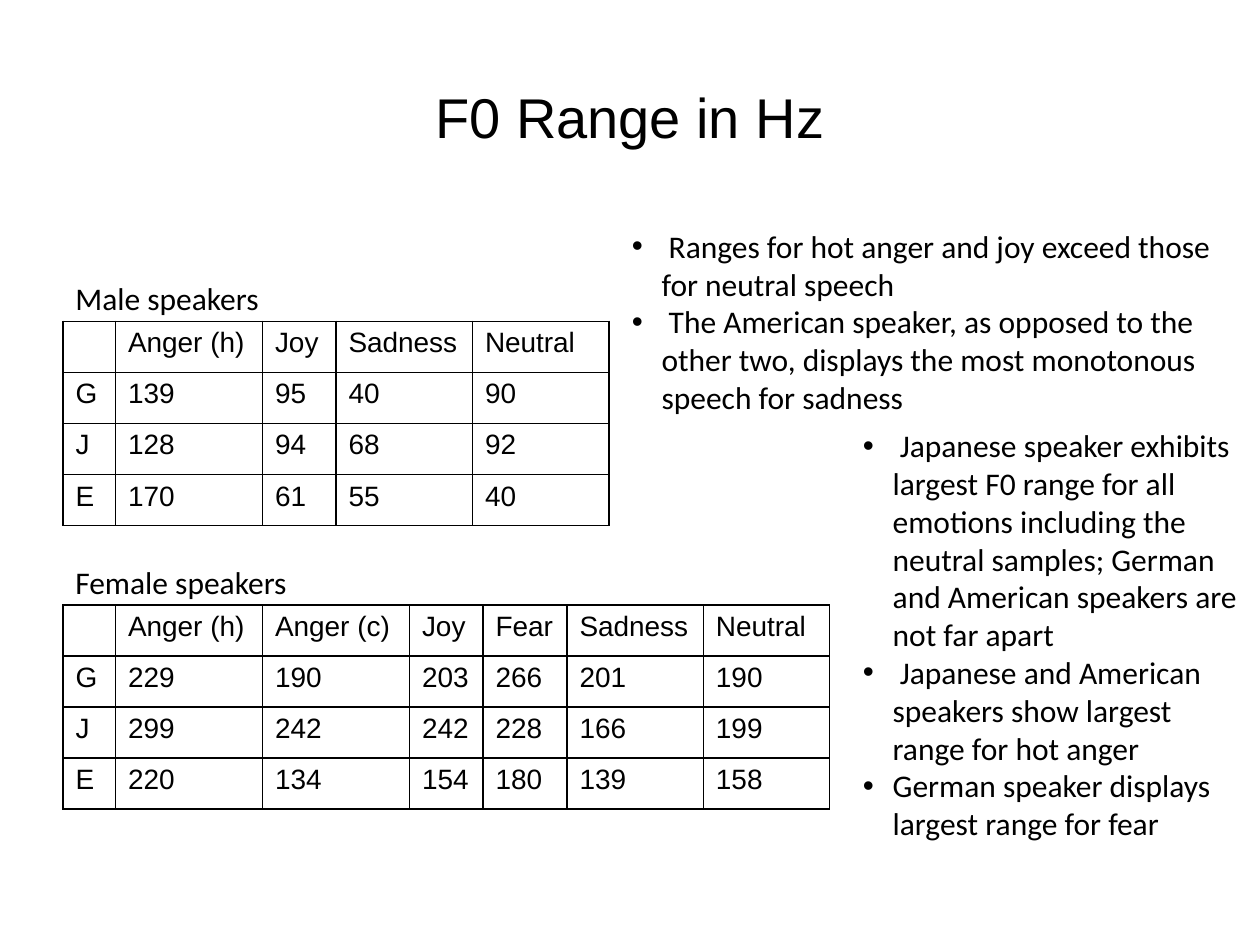
"""Build a slide comparing F0 ranges of male and female speakers."""
import lxml.etree
import pptx
import pptx.dml.color
import pptx.enum.text
import pptx.oxml.ns
import pptx.util

Pt = pptx.util.Pt
qn = pptx.oxml.ns.qn
BLACK = pptx.dml.color.RGBColor(0, 0, 0)
WHITE = pptx.dml.color.RGBColor(255, 255, 255)
LEFT = 36
ROW_HEIGHT = 29.2
BULLET_INDENT = 17

MALE_WIDTHS = [30, 84, 42, 78, 78]
MALE_RANGES = [
    ["", "Anger (h)", "Joy", "Sadness", "Neutral"],
    ["G", "139", "95", "40", "90"],
    ["J", "128", "94", "68", "92"],
    ["E", "170", "61", "55", "40"],
]
FEMALE_WIDTHS = [30, 84, 84, 42, 48, 78, 72]
FEMALE_RANGES = [
    ["", "Anger (h)", "Anger (c)", "Joy", "Fear", "Sadness", "Neutral"],
    ["G", "229", "190", "203", "266", "201", "190"],
    ["J", "299", "242", "242", "228", "166", "199"],
    ["E", "220", "134", "154", "180", "139", "158"],
]
MALE_FINDINGS = [
    " Ranges for hot anger and joy exceed those for neutral speech",
    " The American speaker, as opposed to the other two, displays the most "
    "monotonous speech for sadness",
]
FEMALE_FINDINGS = [
    " Japanese speaker exhibits largest F0 range for all emotions including "
    "the neutral samples; German and American speakers are not far apart",
    " Japanese and American speakers show largest range for hot anger",
    "German speaker displays largest range for fear",
]


class SlideWriter:
    TITLE = {"name": "Arial", "size": Pt(32)}
    CELL = {"name": "Arial", "size": Pt(16)}
    BODY = {"name": "Calibri", "size": Pt(18)}

    def __init__(self, deck):
        self.page = deck.slides.add_slide(deck.slide_layouts[5])
        self.page.background.fill.solid()
        self.page.background.fill.fore_color.rgb = WHITE

    def format(self, para, style):
        for name, value in style.items():
            setattr(para.font, name, value)
        para.font.color.rgb = BLACK

    def title(self, text, left, top, width, height):
        box = self.page.shapes.title
        place = {"left": left, "top": top, "width": width, "height": height}
        for name, value in place.items():
            setattr(box, name, Pt(value))
        box.text_frame.text = text
        box.text_frame.vertical_anchor = pptx.enum.text.MSO_ANCHOR.MIDDLE
        para = box.text_frame.paragraphs[0]
        para.alignment = pptx.enum.text.PP_ALIGN.CENTER
        self.format(para, self.TITLE)

    def text(self, lines, left, top, width, height, bulleted=False):
        box = self.page.shapes.add_textbox(Pt(left), Pt(top), Pt(width), Pt(height))
        frame = box.text_frame
        frame.word_wrap = True
        frame.auto_size = pptx.enum.text.MSO_AUTO_SIZE.SHAPE_TO_FIT_TEXT
        frame.text = "\n".join(lines)
        for para in frame.paragraphs:
            self.format(para, self.BODY)
            if bulleted:
                self.bullet(para)

    def bullet(self, para):
        properties = para._p.get_or_add_pPr()
        properties.set("marL", str(Pt(BULLET_INDENT)))
        properties.set("indent", str(-Pt(BULLET_INDENT)))
        font = lxml.etree.Element(qn("a:buFont"), typeface="Arial")
        mark = lxml.etree.Element(qn("a:buChar"), char="•")
        properties.insert(0, font)
        font.addnext(mark)

    def table(self, rows, widths, left, top):
        frame = self.page.shapes.add_table(
            len(rows), len(widths), Pt(left), Pt(top),
            Pt(sum(widths)), Pt(ROW_HEIGHT * len(rows)))
        table = frame.table
        table.first_row = table.horz_banding = False
        for column, width in zip(table.columns, widths):
            column.width = Pt(width)
        for row, values in zip(table.rows, rows):
            row.height = Pt(ROW_HEIGHT)
            for cell, value in zip(row.cells, values):
                cell.text = value
                self.format(cell.text_frame.paragraphs[0], self.CELL)
                self.border(cell)
                cell.fill.background()

    def border(self, cell):
        properties = cell._tc.get_or_add_tcPr()
        for side in ("lnL", "lnR", "lnT", "lnB"):
            line = lxml.etree.SubElement(properties, qn(f"a:{side}"), w=str(Pt(1)))
            fill = lxml.etree.SubElement(line, qn("a:solidFill"))
            lxml.etree.SubElement(fill, qn("a:srgbClr"), val=str(BLACK))


def main():
    deck = pptx.Presentation()
    deck.slide_width, deck.slide_height = Pt(720), Pt(540)
    writer = SlideWriter(deck)
    writer.title("F0 Range in Hz", LEFT, 21.6, 648, 90)
    writer.text(["Male speakers"], LEFT, 156, 294, 29)
    writer.table(MALE_RANGES, MALE_WIDTHS, LEFT, 183.6)
    writer.text(["Female speakers"], LEFT, 318, 288, 29)
    writer.table(FEMALE_RANGES, FEMALE_WIDTHS, LEFT, 345.6)
    writer.text(MALE_FINDINGS, 354, 126, 354, 115, bulleted=True)
    writer.text(FEMALE_FINDINGS, 486, 240, 234, 245, bulleted=True)
    deck.save("out.pptx")


if __name__ == "__main__":
    main()
